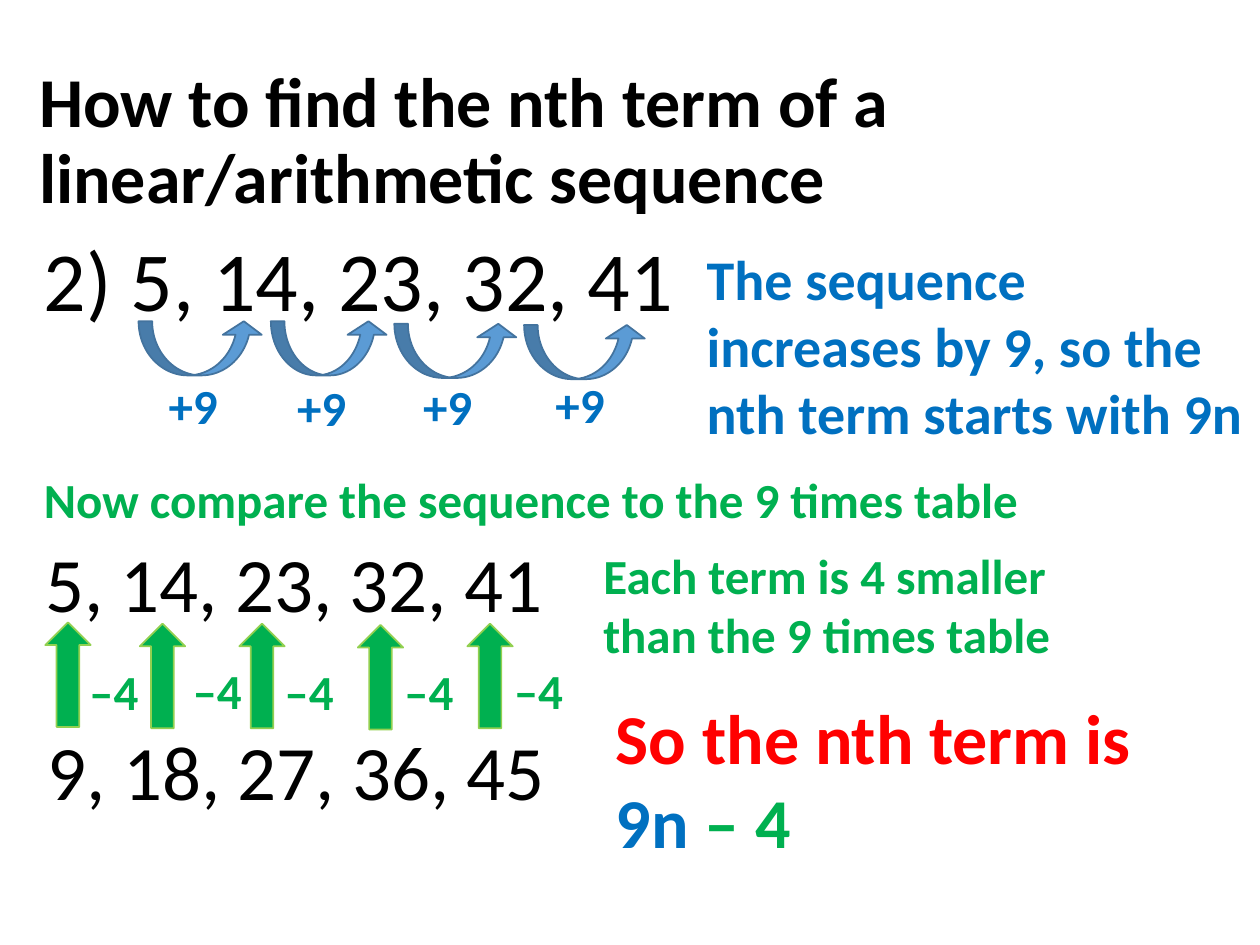
from pptx import Presentation
from pptx.dml.color import RGBColor
from pptx.enum.shapes import MSO_SHAPE
from pptx.enum.text import MSO_ANCHOR, MSO_AUTO_SIZE, PP_ALIGN
from pptx.util import Emu, Pt

# 100 px to the inch
EMU_PER_PX = 9144
FONT = "Calibri"
BLACK, BLUE, GREEN, RED = "000000", "0070C0", "00B050", "FF0000"


def px(length):
    return Emu(length * EMU_PER_PX)


def colour(hex_value):
    return RGBColor.from_string(hex_value)


def write(frame, text, size=28, color=GREEN, bold=True, spacing=None, new_line=False):
    """Add a formatted span to the last paragraph, or to a new one."""
    para = frame.add_paragraph() if new_line else frame.paragraphs[-1]
    para.alignment = PP_ALIGN.LEFT
    if spacing:
        para.line_spacing = spacing
    span = para.add_run()
    span.text = text
    span.font.name = FONT
    span.font.size = Pt(size)
    span.font.bold = bold
    span.font.color.rgb = colour(color)


def add_title(slide, text, left, top, width, height):
    title = slide.shapes.title
    title.left, title.top = px(left), px(top)
    title.width, title.height = px(width), px(height)
    frame = title.text_frame
    frame.auto_size = MSO_AUTO_SIZE.NONE
    frame.vertical_anchor = MSO_ANCHOR.MIDDLE
    write(frame, text, size=40, color=BLACK, spacing=0.9)


def add_text(slide, text, left, top, width, height, wrap=True, **text_format):
    box = slide.shapes.add_textbox(px(left), px(top), px(width), px(height))
    frame = box.text_frame
    frame.word_wrap = wrap
    write(frame, text, **text_format)
    return frame


def add_arrow(slide, kind, left, top, width, height, fill, line, adjustments=()):
    arrow = slide.shapes.add_shape(kind, px(left), px(top), px(width), px(height))
    arrow.shadow.inherit = False
    arrow.fill.solid()
    arrow.fill.fore_color.rgb = colour(fill)
    arrow.line.color.rgb = colour(line)
    arrow.line.width = Pt(1)
    for index, value in enumerate(adjustments):
        arrow.adjustments[index] = value


def add_step(slide, arrow_left, arrow_top, arrow_width, label_left, label_top):
    """Curved arrow from one term to the next, with its difference."""
    add_arrow(slide, MSO_SHAPE.CURVED_UP_ARROW, arrow_left, arrow_top, arrow_width, 43,
              "5B9BD5", "43739E", adjustments=(0.25, 0.72, 0.25))
    add_text(slide, "+9", label_left, label_top, 67, 57, color=BLUE)


def add_comparison(slide, arrow_left, arrow_top, label_left, label_top):
    """Upward arrow from a multiple of 9 to its term, with the difference."""
    add_arrow(slide, MSO_SHAPE.UP_ARROW, arrow_left, arrow_top, 36, 83, GREEN, "92D050")
    add_text(slide, "–4", label_left, label_top, 67, 57)


def main():
    deck = Presentation()
    deck.slide_width, deck.slide_height = px(1000), px(750)
    slide = deck.slides.add_slide(deck.slide_layouts[5])
    add_title(slide, "How to find the nth term of a linear/arithmetic sequence",
              21, 41, 862, 145)

    # The sequence and its common difference
    add_text(slide, "2) 5, 14, 23, 32, 41", 25, 185, 862, 86,
             size=48, color=BLACK, bold=False, spacing=0.9)
    add_text(slide, "The sequence increases by 9, so the nth term starts with 9n",
             551, 189, 449, 172, size=32, color=BLUE)
    for step in [(110, 255, 99, 124, 293), (215, 255, 93, 226, 295),
                 (313, 257, 98, 326, 294), (416, 258, 97, 431, 292)]:
        add_step(slide, *step)

    # Comparison with the times table
    add_text(slide, "Now compare the sequence to the 9 times table", 25, 368, 851, 57)
    for numbers, left, top in [("5, 14, 23, 32, 41", 26, 420),
                               ("9, 18, 27, 36, 45", 28, 569)]:
        add_text(slide, numbers, left, top, 419, 84, wrap=False,
                 size=44, color=BLACK, bold=False)
    for comparison in [(36, 494, 61, 520), (111, 495, 143, 519), (190, 495, 216, 520),
                       (284, 496, 311, 520), (371, 495, 398, 519)]:
        add_comparison(slide, *comparison)
    add_text(slide, "Each term is 4 smaller than the 9 times table", 469, 428, 447, 104)

    # Conclusion
    answer = add_text(slide, "So the nth term is", 479, 546, 449, 145, size=40, color=RED)
    write(answer, "9n ", size=40, color=BLUE, new_line=True)
    write(answer, "– 4", size=40)

    deck.save("out.pptx")


if __name__ == "__main__":
    main()
